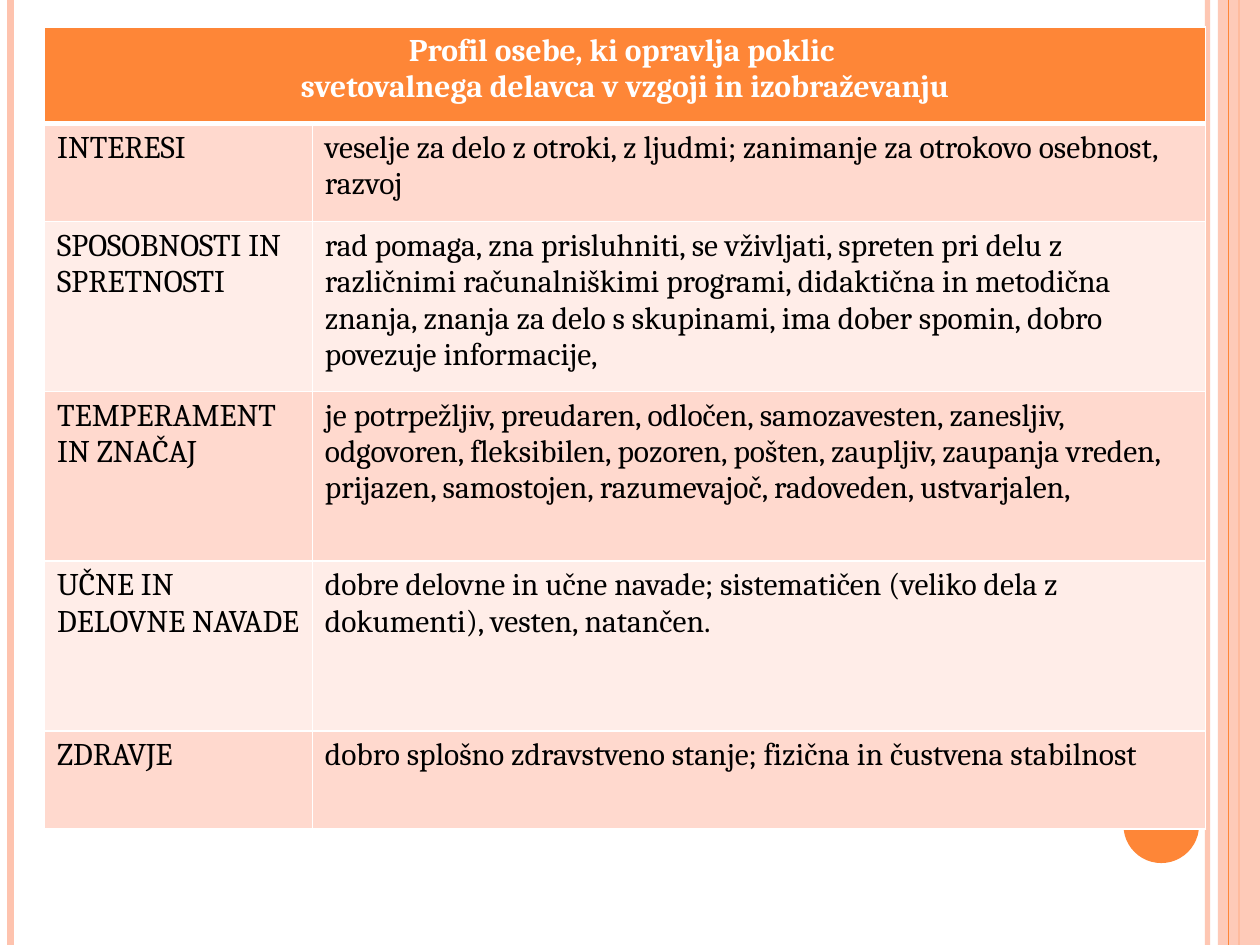
from lxml import etree
from pptx import Presentation
from pptx.dml.color import RGBColor
from pptx.enum.shapes import MSO_CONNECTOR, MSO_SHAPE
from pptx.enum.text import PP_ALIGN
from pptx.oxml.ns import qn
from pptx.util import Pt

STRAIGHT = MSO_CONNECTOR.STRAIGHT
RECT, OVAL = MSO_SHAPE.RECTANGLE, MSO_SHAPE.OVAL
LEFT, CENTER = PP_ALIGN.LEFT, PP_ALIGN.CENTER

WIDTH, HEIGHT = 720, 540
FONT = "Cambria"
ORANGE, PEACH, WHITE, BLACK = "FE8637", "FEC3AE", "FFFFFF", "000000"
BANDS = ("FFD9CE", "FFEDE8")

TITLE = ("Profil osebe, ki opravlja poklic ",
         "svetovalnega delavca v vzgoji in izobraževanju")
PROFILE = [
    ("INTERESI",
     "veselje za delo z otroki, z ljudmi; zanimanje za otrokovo osebnost, razvoj"),
    ("SPOSOBNOSTI IN SPRETNOSTI",
     "rad pomaga, zna prisluhniti, se vživljati, spreten pri delu z različnimi "
     "računalniškimi programi, didaktična in metodična znanja, znanja za delo s "
     "skupinami, ima dober spomin, dobro povezuje informacije,"),
    ("TEMPERAMENT IN ZNAČAJ",
     "je potrpežljiv, preudaren, odločen, samozavesten, zanesljiv, odgovoren, "
     "fleksibilen, pozoren, pošten, zaupljiv, zaupanja vreden, prijazen, "
     "samostojen, razumevajoč, radoveden, ustvarjalen,"),
    ("UČNE IN DELOVNE NAVADE",
     "dobre delovne in učne navade; sistematičen (veliko dela z dokumenti), "
     "vesten, natančen."),
    ("ZDRAVJE",
     "dobro splošno zdravstveno stanje; fizična in čustvena stabilnost"),
]
COL_WIDTHS = (153, 510.5)
ROW_HEIGHTS = (55.2, 56.2, 97, 97, 97, 56.2)


def rgb(color):
    return RGBColor.from_string(color)


def set_alpha(sp, percent):
    """Make the only colour of a shape or line partly transparent."""
    clr = next(sp._element.spPr.iter(qn("a:srgbClr")))
    etree.SubElement(clr, qn("a:alpha"), val=str(percent * 1000))


def add_stripe(s, x, color, weight):
    """Add a vertical line over the whole slide height."""
    line = s.shapes.add_connector(STRAIGHT, Pt(x), 0, Pt(x), Pt(HEIGHT))
    line.line.color.rgb = rgb(color)
    line.line.width = Pt(weight)
    etree.SubElement(line._element.spPr, qn("a:effectLst"))
    return line


def add_filled(s, kind, x, y, w, h, color):
    sp = s.shapes.add_shape(kind, Pt(x), Pt(y), Pt(w), Pt(h))
    sp.shadow.inherit = False
    sp.fill.solid()
    sp.fill.fore_color.rgb = rgb(color)
    sp.line.fill.background()
    return sp


def write(tf, *lines, size=18, color=BLACK, bold=False, align=LEFT):
    for i, text in enumerate(lines):
        p = tf.add_paragraph() if i else tf.paragraphs[0]
        p.alignment = align
        r = p.add_run()
        r.text = text
        r.font.name = FONT
        r.font.size = Pt(size)
        r.font.bold = bold
        r.font.color.rgb = rgb(color)


def set_borders(cell, color=WHITE, top=1, bottom=1):
    tc_pr = cell._tc.get_or_add_tcPr()
    for side, weight in (("L", 1), ("R", 1), ("T", top), ("B", bottom)):
        ln = etree.SubElement(tc_pr, qn(f"a:ln{side}"), w=str(Pt(weight)))
        fill = etree.SubElement(ln, qn("a:solidFill"))
        etree.SubElement(fill, qn("a:srgbClr"), val=color)


def style_cell(cell, color, **borders):
    set_borders(cell, **borders)
    cell.fill.solid()
    cell.fill.fore_color.rgb = rgb(color)


def add_profile_table(s, x, y):
    frame = s.shapes.add_table(len(ROW_HEIGHTS), len(COL_WIDTHS), Pt(x), Pt(y),
                               Pt(sum(COL_WIDTHS)), Pt(sum(ROW_HEIGHTS)))
    table = frame.table
    for col, width in zip(table.columns, COL_WIDTHS):
        col.width = Pt(width)
    for row, height in zip(table.rows, ROW_HEIGHTS):
        row.height = Pt(height)

    header = table.cell(0, 0)
    header.merge(table.cell(0, 1))
    for cell in table.rows[0].cells:
        style_cell(cell, ORANGE, bottom=3)
    write(header.text_frame, *TITLE, color=WHITE, bold=True, align=CENTER)

    for i, texts in enumerate(PROFILE):
        for j, text in enumerate(texts):
            cell = table.cell(i + 1, j)
            style_cell(cell, BANDS[i % 2], top=1 if i else 3)
            write(cell.text_frame, text)


def add_decoration(s):
    set_alpha(add_stripe(s, 690, PEACH, 3), 93)
    add_stripe(s, 6, PEACH, 4.5)
    add_stripe(s, 708, ORANGE, 1.5)
    set_alpha(add_filled(s, RECT, 696, 0, WIDTH - 696, HEIGHT, PEACH), 87)
    add_stripe(s, 702, ORANGE, 0.75)
    add_filled(s, OVAL, 642, 450, 43.2, 43.2, ORANGE)


def main():
    prs = Presentation()
    prs.slide_width, prs.slide_height = Pt(WIDTH), Pt(HEIGHT)
    s = prs.slides.add_slide(prs.slide_layouts[6])
    add_decoration(s)
    add_profile_table(s, 25.5, 15.3)
    prs.save("out.pptx")


if __name__ == "__main__":
    main()
